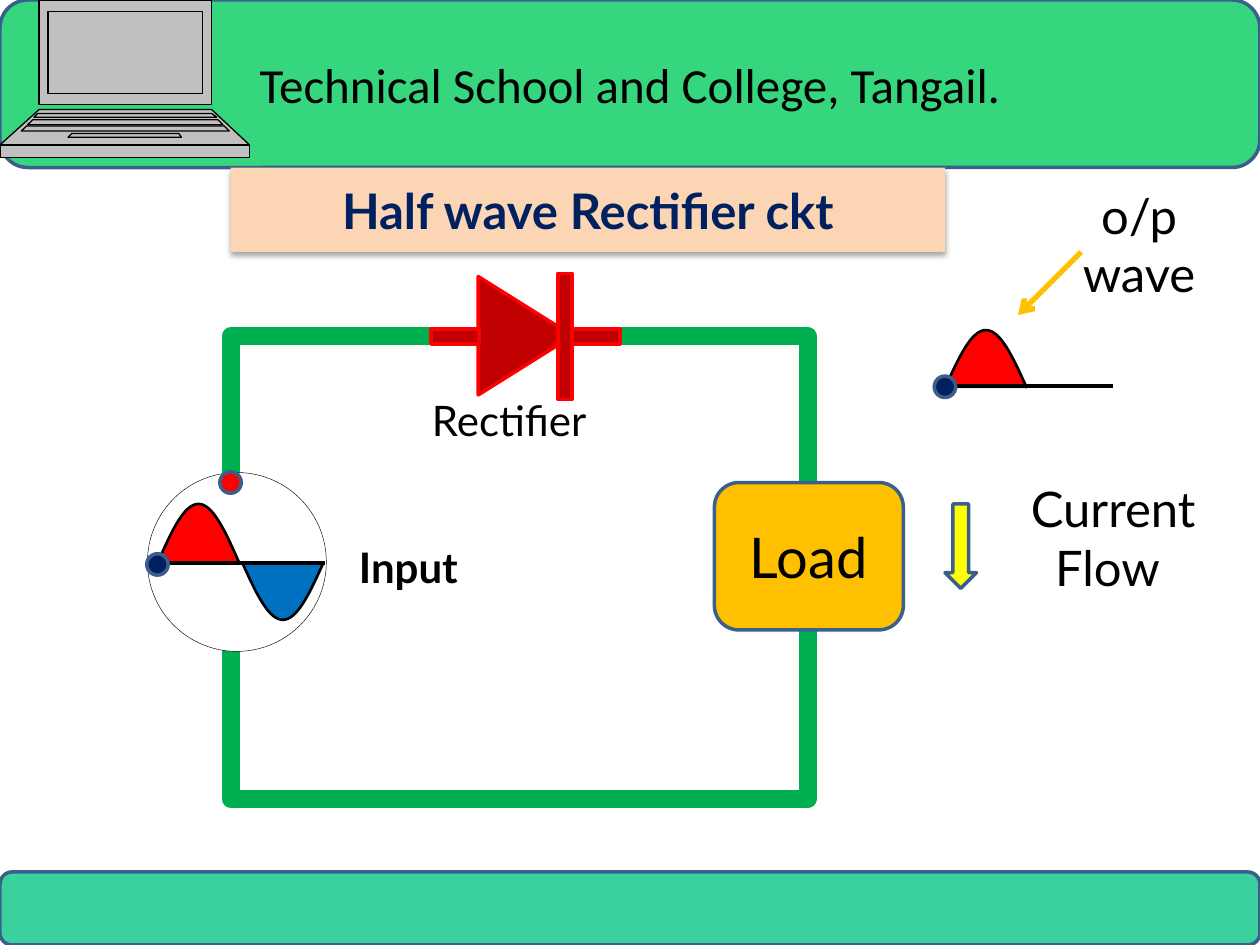
"""Build the half wave rectifier slide."""
import dataclasses
import math

import lxml.etree
import pptx
import pptx.dml.color
import pptx.enum.shapes
import pptx.enum.text
import pptx.oxml.ns
import pptx.util

Inches = pptx.util.Inches
Kind = pptx.enum.shapes.MSO_SHAPE
Align = pptx.enum.text.PP_ALIGN
qn = pptx.oxml.ns.qn


@dataclasses.dataclass(frozen=True)
class Theme:
    """Hold the colours, fonts and type sizes."""
    head: str = "36D67E"
    foot: str = "3BD19F"
    edge: str = "3A5F8C"
    gray: str = "C0C0C0"
    black: str = "000000"
    white: str = "FFFFFF"
    wire: str = "00B050"
    dark: str = "C00000"
    red: str = "FF0000"
    gold: str = "FFC000"
    peach: str = "FCD5B5"
    navy: str = "002060"
    blue: str = "0070C0"
    yellow: str = "FFFF00"
    font: str = "Lato"
    plain: str = "Calibri"
    small: int = 24
    mid: int = 28
    large: int = 32


THEME = Theme()


def tint(text):
    """Turn a hex text into a colour."""
    return pptx.dml.color.RGBColor.from_string(text)


def paint(shape, fill=None, line=None, width=2):
    """Set the fill and line of a shape and drop its shadow."""
    shape.shadow.inherit = False
    if fill:
        shape.fill.solid()
        shape.fill.fore_color.rgb = tint(fill)
    else:
        shape.fill.background()
    if line:
        shape.line.color.rgb = tint(line)
        shape.line.width = pptx.util.Pt(width)
    else:
        shape.line.fill.background()
    return shape


def block(shapes, kind, box, fill=None, line=THEME.edge, width=2):
    """Add a preset shape."""
    shape = shapes.add_shape(kind, *map(Inches, box))
    return paint(shape, fill, line, width)


def write(shape, text, size, color=THEME.black, bold=False,
          font=THEME.font, align=Align.CENTER):
    """Write one run of text in a shape."""
    para = shape.text_frame.paragraphs[0]
    para.alignment = align
    run = para.add_run()
    run.text = text
    run.font.name = font
    run.font.size = pptx.util.Pt(size)
    run.font.bold = bold
    run.font.color.rgb = tint(color)


def label(shapes, box, text, size, **style):
    """Add a text box that wraps."""
    shape = shapes.add_textbox(*map(Inches, box))
    shape.text_frame.word_wrap = True
    write(shape, text, size, **style)


def line(shapes, start, end, color, width, arrow=False):
    """Add a straight line, with an arrowhead if asked."""
    kind = pptx.enum.shapes.MSO_CONNECTOR.STRAIGHT
    link = shapes.add_connector(kind, *map(Inches, start + end))
    link.line.color.rgb = tint(color)
    link.line.width = pptx.util.Pt(width)
    props = link._element.spPr
    if arrow:
        lxml.etree.SubElement(props.find(qn("a:ln")), qn("a:tailEnd"), type="arrow")
    lxml.etree.SubElement(props, qn("a:effectLst"))


def shade(shape):
    """Give a shape a soft shadow below it."""
    effects = shape._element.spPr.find(qn("a:effectLst"))
    outer = lxml.etree.SubElement(
        effects, qn("a:outerShdw"), blurRad=str(pptx.util.Pt(3.1)),
        dist=str(pptx.util.Pt(1.8)), dir="5400000", rotWithShape="0")
    color = lxml.etree.SubElement(outer, qn("a:srgbClr"), val=THEME.black)
    lxml.etree.SubElement(color, qn("a:alpha"), val="35000")


def wave(shapes, left, base, high, fill):
    """Add half a sine wave, downward when high is negative."""
    steps, wide = 32, 0.65
    points = [(left + wide * i / steps,
               base - high * math.sin(math.pi * i / steps))
              for i in range(steps + 1)]
    pen = shapes.build_freeform(*points[0], scale=Inches(1))
    pen = shapes.build_freeform(*map(Inches, points[0]))
    pen.add_line_segments([tuple(map(Inches, p)) for p in points[1:]], close=False)
    paint(pen.convert_to_shape(), fill, THEME.black, 1.5)


def dot(shapes, x, y, fill):
    """Add a small terminal dot around a centre."""
    size = 0.17
    block(shapes, Kind.OVAL, (x - size / 2, y - size / 2, size, size), fill)


def laptop(shapes):
    """Draw the laptop as one outline of eight trapezoids."""
    faces = [
        (0, 0.83, 0.31, 1.68, 0.31, 1.68),
        (0.87, 1.15, 0.31, 1.68, 0, 1.98),
        (1.15, 1.25, 0, 1.98, 0, 1.98),
        (0.09, 0.74, 0.38, 1.61, 0.38, 1.61),
        (0.9, 0.93, 0.3, 1.68, 0.27, 1.72),
        (1.06, 1.09, 0.57, 1.42, 0.54, 1.44),
        (0.95, 0.99, 0.26, 1.73, 0.22, 1.77),
        (1, 1.04, 0.21, 1.78, 0.17, 1.82)]
    pen = None
    for top, low, left, right, west, east in faces:
        start = Inches(left), Inches(top)
        if pen:
            pen.move_to(*start)
        else:
            pen = shapes.build_freeform(*start)
        rest = [(right, top), (east, low), (west, low)]
        pen.add_line_segments([tuple(map(Inches, p)) for p in rest])
    shape = paint(pen.convert_to_shape(), THEME.gray, THEME.black, 0.75)
    whole = next(shape._element.iter(qn("a:path")))
    part = whole
    for step in list(whole):
        if step.tag == qn("a:moveTo") and step is not whole[0]:
            part = lxml.etree.SubElement(
                whole.getparent(), qn("a:path"), dict(whole.attrib))
        if part is not whole:
            part.append(step)


def diode(shapes):
    """Draw the diode as a group."""
    parts = shapes.add_group_shape().shapes
    cone = block(parts, Kind.ISOSCELES_TRIANGLE, (3.7, 2.29, 0.94, 0.75),
                 THEME.dark, THEME.red)
    cone.rotation = 90
    for box in ((4.43, 2.17, 0.11, 1), (3.42, 2.61, 0.38, 0.12),
                (4.54, 2.61, 0.38, 0.12)):
        block(parts, Kind.FLOWCHART_PROCESS, box, THEME.dark, THEME.red)


def frame(shapes):
    """Draw the header, footer and laptop."""
    head = block(shapes, Kind.ROUNDED_RECTANGLE, (0, 0, 10, 1.33), THEME.head)
    write(head, "Technical School and College, Tangail.", THEME.mid, font=THEME.plain)
    block(shapes, Kind.ROUNDED_RECTANGLE, (0, 6.92, 10, 0.58), THEME.foot)
    laptop(shapes)


def main():
    """Build and save the slide."""
    deck = pptx.Presentation()
    deck.slide_width, deck.slide_height = Inches(10), Inches(7.5)
    shapes = deck.slides.add_slide(deck.slide_layouts[6]).shapes
    frame(shapes)
    block(shapes, Kind.FLOWCHART_PROCESS, (1.83, 2.67, 4.58, 3.67),
          line=THEME.wire, width=10.25)
    diode(shapes)
    load = block(shapes, Kind.ROUNDED_RECTANGLE, (5.67, 3.83, 1.5, 1.17), THEME.gold)
    write(load, "Load", THEME.large)
    title = block(shapes, Kind.RECTANGLE, (1.83, 1.33, 5.67, 0.67), THEME.peach, None)
    shade(title)
    write(title, "Half wave Rectifier ckt", THEME.mid, THEME.navy, True)
    wave(shapes, 7.5, 3.08, 0.46, THEME.red)
    line(shapes, (7.5, 3.06), (8.83, 3.06), THEME.black, 2.25)
    dot(shapes, 7.5, 3.07, THEME.navy)
    block(shapes, Kind.OVAL, (1.17, 3.75, 1.42, 1.42), THEME.white, THEME.black, 0.25)
    wave(shapes, 1.25, 4.47, 0.47, THEME.red)
    wave(shapes, 1.92, 4.46, -0.46, THEME.blue)
    line(shapes, (1.25, 4.47), (2.58, 4.47), THEME.black, 2.25)
    dot(shapes, 1.25, 4.48, THEME.navy)
    dot(shapes, 1.83, 3.83, THEME.red)
    block(shapes, Kind.DOWN_ARROW, (7.5, 4, 0.25, 0.67), THEME.yellow)
    label(shapes, (7.92, 3.75, 1.83, 1.04), "Current Flow ", THEME.mid)
    label(shapes, (8.25, 1.42, 1.58, 1.04), "o/p wave", THEME.mid)
    label(shapes, (2.75, 4.25, 1.25, 0.5), "Input", THEME.small,
          bold=True, align=Align.LEFT)
    line(shapes, (8.58, 2), (8.08, 2.5), THEME.gold, 3, arrow=True)
    label(shapes, (3.33, 3.08, 1.75, 0.5), "Rectifier", THEME.small, align=Align.LEFT)
    deck.save("out.pptx")


if __name__ == "__main__":
    main()
